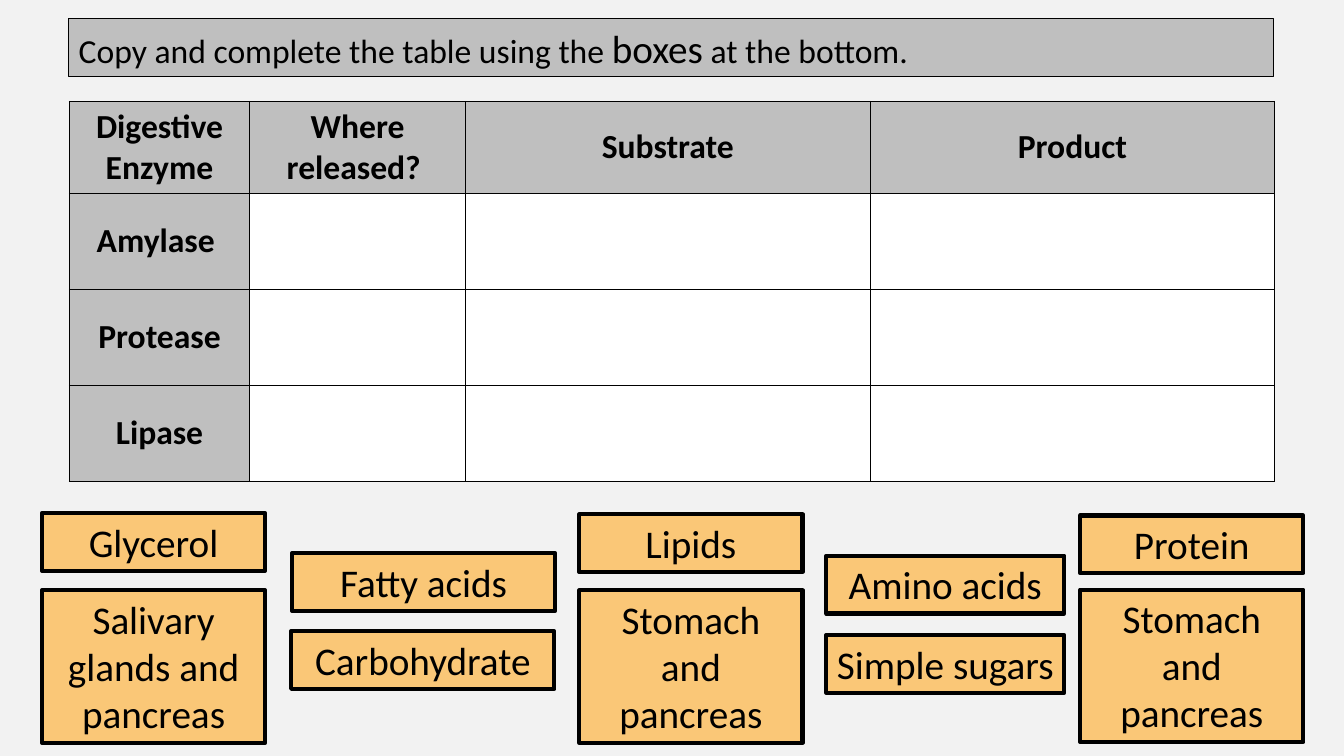
"""Build a worksheet slide on digestive enzymes."""
from dataclasses import dataclass

from lxml import etree
from pptx import Presentation
from pptx.dml.color import RGBColor
from pptx.enum import shapes, text
from pptx.oxml import ns
from pptx.util import Pt


@dataclass(frozen=True)
class Theme:
    font: str = "Calibri"
    ink: str = "000000"
    back: str = "F2F2F2"
    head: str = "BFBFBF"
    blank: str = "FFFFFF"
    card: str = "FAC777"
    body: int = 24
    large: int = 28


def paint(fill, color):
    fill.solid()
    fill.fore_color.rgb = RGBColor.from_string(color)


def write(frame, words, theme, size=24, bold=False, align="CENTER", anchor="TOP"):
    frame.word_wrap = True
    frame.vertical_anchor = getattr(text.MSO_ANCHOR, anchor)
    para = frame.paragraphs[0]
    para.alignment = getattr(text.PP_ALIGN, align)
    runs = [(words, size)] if isinstance(words, str) else words
    for part, points in runs:
        run = para.add_run()
        run.text = part
        run.font.name = theme.font
        run.font.size = Pt(points)
        run.font.bold = bold
        run.font.color.rgb = RGBColor.from_string(theme.ink)


class Sheet:
    def __init__(self, deck, theme):
        self.theme = theme
        self.slide = deck.slides.add_slide(deck.slide_layouts[5])
        paint(self.slide.background.fill, theme.back)

    def frame(self, shape, fill, width):
        paint(shape.fill, fill)
        shape.line.color.rgb = RGBColor.from_string(self.theme.ink)
        shape.line.width = Pt(width)

    def title(self, runs, left, top, width, height):
        bar = self.slide.shapes.title
        bar.left, bar.top, bar.width, bar.height = map(Pt, (left, top, width, height))
        self.frame(bar, self.theme.head, 0.75)
        bar.text_frame.auto_size = text.MSO_AUTO_SIZE.NONE
        write(bar.text_frame, runs, self.theme, align="LEFT")

    def card(self, words, left, top, width, height):
        box = self.slide.shapes.add_shape(
            shapes.MSO_SHAPE.RECTANGLE, *map(Pt, (left, top, width, height)))
        box.shadow.inherit = False
        self.frame(box, self.theme.card, 3)
        write(box.text_frame, words, self.theme, size=self.theme.large)

    def edge(self, cell):
        props = cell._tc.get_or_add_tcPr()
        for side in ("a:lnL", "a:lnR", "a:lnT", "a:lnB"):
            line = etree.SubElement(props, ns.qn(side), w=str(Pt(1)))
            fill = etree.SubElement(line, ns.qn("a:solidFill"))
            etree.SubElement(fill, ns.qn("a:srgbClr"), val=self.theme.ink)

    def table(self, heads, names, left, top, widths, heights):
        grid = self.slide.shapes.add_table(
            len(heights), len(widths), Pt(left), Pt(top),
            Pt(sum(widths)), Pt(sum(heights))).table
        grid.first_row = grid.horz_banding = False
        for col, width in zip(grid.columns, widths):
            col.width = Pt(width)
        for row, height in zip(grid.rows, heights):
            row.height = Pt(height)
        rows = [heads] + [[name] + [""] * (len(heads) - 1) for name in names]
        for r, row in enumerate(rows):
            for c, words in enumerate(row):
                cell = grid.cell(r, c)
                self.edge(cell)
                paint(cell.fill, self.theme.head if words else self.theme.blank)
                if words:
                    write(cell.text_frame, words, self.theme,
                          size=self.theme.body, bold=True)
                    cell.vertical_anchor = text.MSO_ANCHOR.MIDDLE


def main():
    deck = Presentation()
    deck.slide_width, deck.slide_height = Pt(960), Pt(540)
    theme = Theme()
    sheet = Sheet(deck, theme)
    sheet.title([("Copy and complete the table using the ", theme.body),
                 ("boxes", theme.large),
                 (" at the bottom.", theme.body)], 49, 13.5, 861, 41.2)
    sheet.table(["Digestive Enzyme", "Where released? ", "Substrate", "Product"],
                ["Amylase ", "Protease", "Lipase"],
                49.7, 72.5, [128.6, 154.3, 289, 289], [65.8] + [68.5] * 3)
    short, tall = 41.2, 108.9
    cards = [
        ("Glycerol", 30, 366.5, 159.4, short),
        ("Salivary glands and pancreas", 30, 421.7, 159.4, tall),
        ("Fatty acids", 208.6, 395.2, 188, short),
        ("Carbohydrate", 208, 450.9, 188, short),
        ("Lipids", 413.8, 367.4, 159.4, short),
        ("Stomach and pancreas", 413.8, 421.7, 159.4, tall),
        ("Amino acids", 590.2, 397, 170, short),
        ("Simple sugars", 590.2, 453.6, 170, short),
        ("Protein", 771.6, 368.2, 159.4, short),
        ("Stomach and pancreas", 771.6, 421.2, 159.4, tall),
    ]
    for card in cards:
        sheet.card(*card)
    deck.save("out.pptx")


if __name__ == "__main__":
    main()
